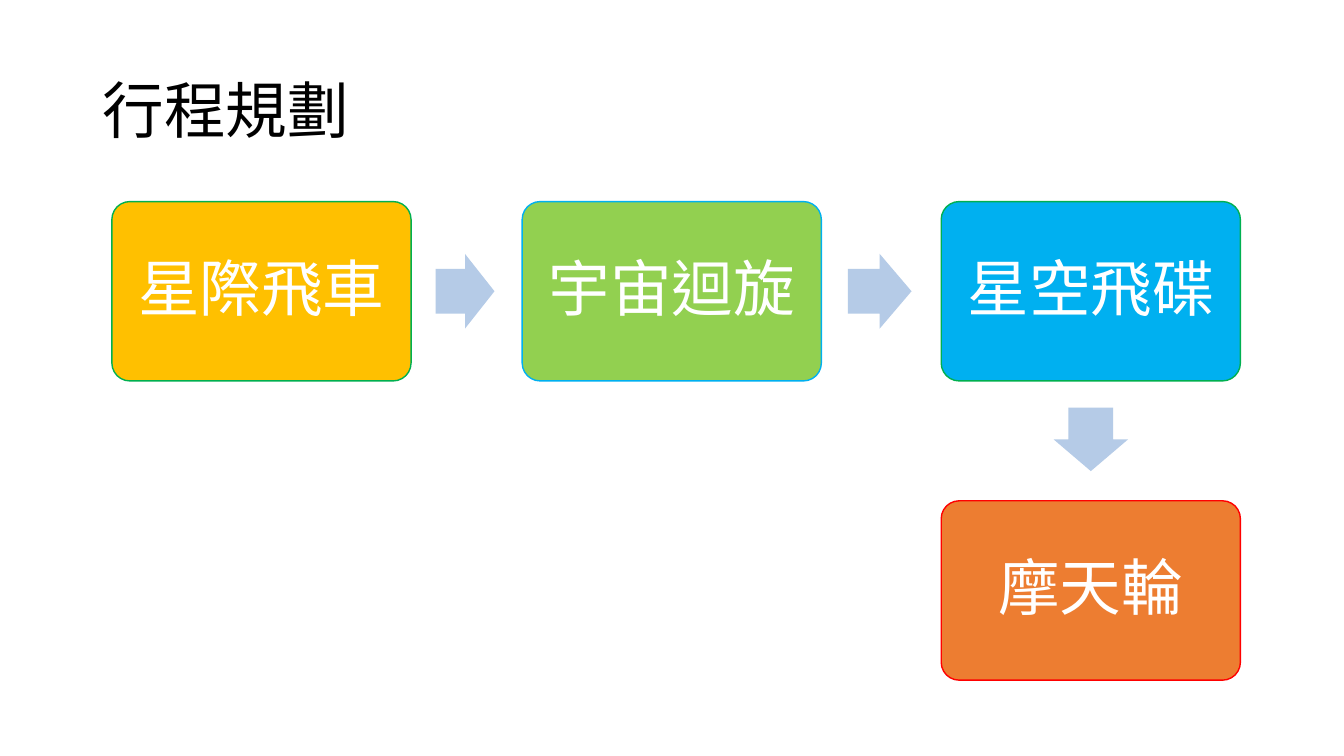
from pptx import Presentation
from pptx import util as u
from pptx.dml.color import RGBColor
from pptx.enum import lang, shapes, text

BLACK = RGBColor(0x00, 0x00, 0x00)
WHITE = RGBColor(0xFF, 0xFF, 0xFF)
AMBER = RGBColor(0xFF, 0xC0, 0x00)
LIME = RGBColor(0x92, 0xD0, 0x50)
GREEN = RGBColor(0x00, 0xB0, 0x50)
SKY = RGBColor(0x00, 0xB0, 0xF0)
ORANGE = RGBColor(0xED, 0x7D, 0x31)
RED = RGBColor(0xFF, 0x00, 0x00)
PALE_BLUE = RGBColor(0xB5, 0xCB, 0xE7)

STOP_W, STOP_H = 7.54, 4.52
ARROW_H = 1.88
ARROW_SHARE = 0.53
ARROW_SHIFT = 0.04
STOPS = [
    ("星際飛車", 0, 0, AMBER, GREEN),
    ("宇宙迴旋", 10.34, 0, LIME, SKY),
    ("星空飛碟", 20.9, 0, SKY, GREEN),
    ("摩天輪", 20.9, 7.54, ORANGE, RED),
]


def write(sp, words, color=BLACK, align=text.PP_ALIGN.LEFT, margin=0.25):
    """Fill a shape with one vertically centred line of formatted text."""
    tf = sp.text_frame
    tf.word_wrap = True
    tf.auto_size = text.MSO_AUTO_SIZE.NONE
    tf.vertical_anchor = text.MSO_ANCHOR.MIDDLE
    tf.margin_left = tf.margin_right = u.Cm(margin)
    p = tf.paragraphs[0]
    p.alignment = align
    p.line_spacing = 0.9
    r = p.add_run()
    r.text = words
    r.font.name = "Calibri"
    r.font.size = u.Pt(44)
    r.font.color.rgb = color
    r.font.language_id = lang.MSO_LANGUAGE_ID.TRADITIONAL_CHINESE


def add_block(s, kind, left, top, width, height, fill):
    """Add a flat filled shape without outline, measured in centimetres."""
    sp = s.shapes.add_shape(kind, u.Cm(left), u.Cm(top), u.Cm(width), u.Cm(height))
    sp.shadow.inherit = False
    sp.fill.solid()
    sp.fill.fore_color.rgb = fill
    sp.line.fill.background()
    return sp


def add_stop(s, left, top, words, fill, outline):
    """Add one rounded box of the itinerary."""
    sp = add_block(s, shapes.MSO_SHAPE.ROUNDED_RECTANGLE, left, top, STOP_W, STOP_H, fill)
    sp.adjustments[0] = 0.1
    sp.line.color.rgb = outline
    sp.line.width = u.Pt(1)
    write(sp, words, color=WHITE, align=text.PP_ALIGN.CENTER, margin=0.2)


def add_arrow(s, start, end):
    """Add the arrow in the gap between two stops, given their corners."""
    dx, dy = end[0] - start[0], end[1] - start[1]
    down = dy > 0
    gap = dy - STOP_H if down else dx - STOP_W
    length = ARROW_SHARE * gap
    x = start[0] + (STOP_W + dx) / 2
    y = start[1] + (STOP_H + dy) / 2
    if down:
        y -= ARROW_SHIFT
    else:
        x -= ARROW_SHIFT
    sp = add_block(s, shapes.MSO_SHAPE.RIGHT_ARROW, x - length / 2, y - ARROW_H / 2,
                   length, ARROW_H, PALE_BLUE)
    sp.adjustments[0] = 0.6
    sp.adjustments[1] = 0.5
    sp.rotation = 90 if down else 0


def add_title(s, left, top, width, height):
    """Place and fill the title placeholder."""
    title = s.shapes.title
    title.left, title.top = u.Cm(left), u.Cm(top)
    title.width, title.height = u.Cm(width), u.Cm(height)
    write(title, "行程規劃")


def add_itinerary(s, left, top):
    """Lay out the stops and the arrows between them from a top-left corner."""
    corners = [(left + dx, top + dy) for _, dx, dy, _, _ in STOPS]
    for (x, y), (words, _, _, fill, outline) in zip(corners, STOPS):
        add_stop(s, x, y, words, fill, outline)
    for start, end in zip(corners, corners[1:]):
        add_arrow(s, start, end)


def main():
    """Build the slide and save it."""
    prs = Presentation()
    prs.slide_width, prs.slide_height = u.Cm(33.87), u.Cm(19.05)
    s = prs.slides.add_slide(prs.slide_layouts[5])
    add_title(s, 2.34, 1.02, 29.21, 3.68)
    add_itinerary(s, 2.82, 5.08)
    prs.save("out.pptx")


if __name__ == "__main__":
    main()
